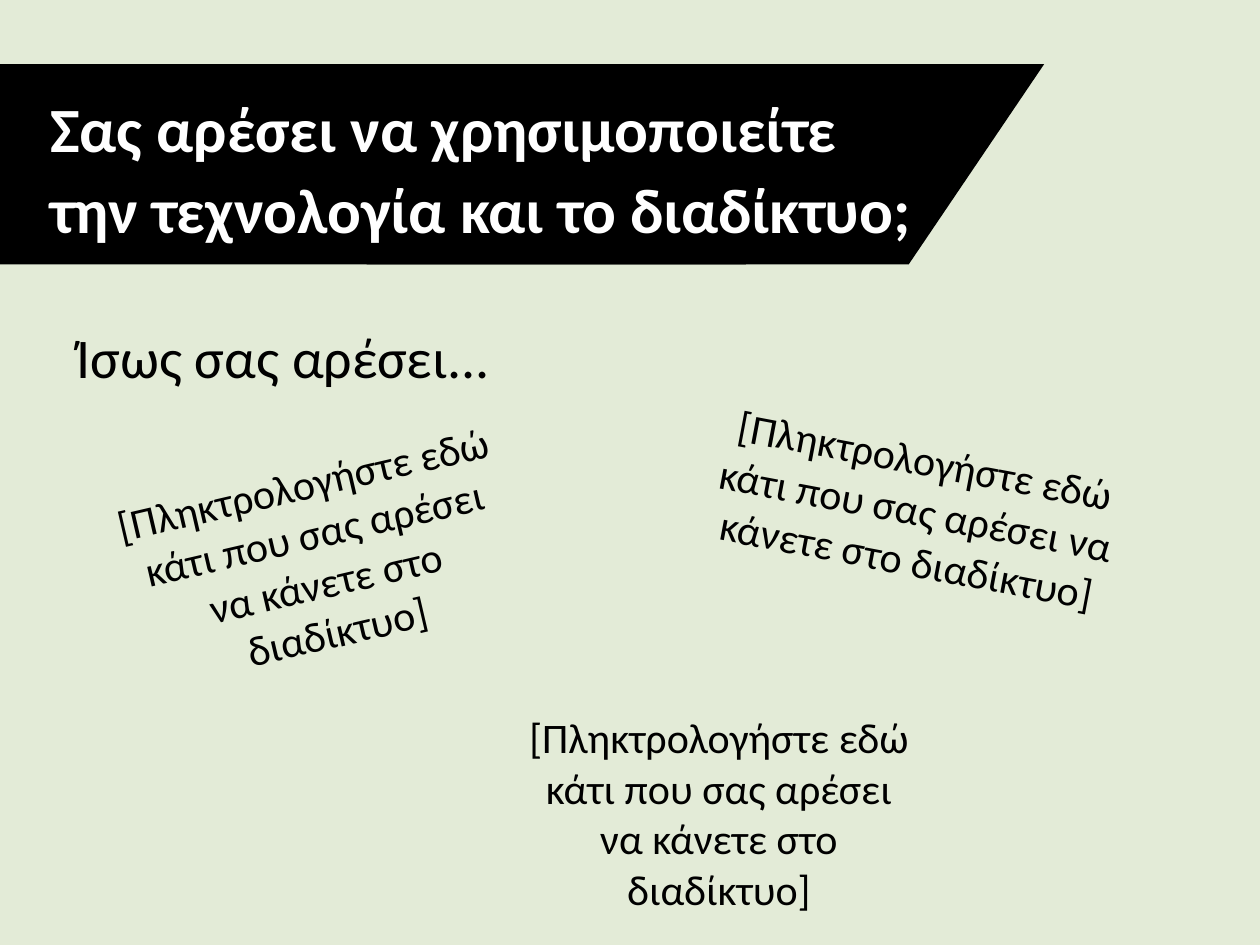
from dataclasses import dataclass

from pptx import Presentation
from pptx import util as u
from pptx.dml.color import RGBColor
from pptx.enum import shapes, text
from pptx.slide import Slide


@dataclass(frozen=True)
class Theme:
    font: str = "Calibri"
    background: RGBColor = RGBColor(0xE3, 0xEB, 0xD7)
    dark: RGBColor = RGBColor(0, 0, 0)
    light: RGBColor = RGBColor(0xFF, 0xFF, 0xFF)
    title_size: float = 36
    lead_size: float = 32
    prompt_size: float = 24


@dataclass(frozen=True)
class Box:
    left: float
    top: float
    width: float
    height: float
    rotation: float = 0

    def lengths(self) -> tuple[u.Length, ...]:
        return tuple(u.Pt(value) for value in (self.left, self.top, self.width, self.height))


@dataclass(frozen=True)
class Label:
    box: Box
    wording: str
    size: float
    color: RGBColor
    bold: bool = False
    alignment: text.PP_ALIGN = text.PP_ALIGN.LEFT
    line_spacing: float = 1.0


THEME = Theme()
BANNER_TOP, BANNER_HEIGHT = 36.6, 114.5
BANNER_PARTS = (
    (shapes.MSO_SHAPE.FLOWCHART_DATA, Box(209.5, BANNER_TOP, 387.2, BANNER_HEIGHT)),
    (shapes.MSO_SHAPE.RECTANGLE, Box(0, BANNER_TOP, 426.2, BANNER_HEIGHT)),
)
PROMPT = "[Πληκτρολογήστε εδώ κάτι που σας αρέσει να κάνετε στο διαδίκτυο]"
PROMPT_BOXES = (
    Box(63.4, 257, 239, 123.8, 346.9),
    Box(400.3, 244.1, 246.2, 94.3, 10.7),
    Box(290.2, 403.2, 241.2, 123.8),
)
TITLE = Label(
    Box(21.6, 44.6, 511.9, 98.6),
    "Σας αρέσει να χρησιμοποιείτε την τεχνολογία και το διαδίκτυο;",
    THEME.title_size,
    THEME.light,
    bold=True,
    line_spacing=1.07,
)
LEAD = Label(Box(36.7, 180.7, 360, 46.1), "Ίσως σας αρέσει...", THEME.lead_size, THEME.dark)


def draw_banner_part(slide: Slide, kind: shapes.MSO_SHAPE, box: Box) -> None:
    shape = slide.shapes.add_shape(kind, *box.lengths())
    shape.shadow.inherit = False
    shape.fill.solid()
    shape.fill.fore_color.rgb = THEME.dark
    shape.line.fill.background()


def draw_label(slide: Slide, label: Label) -> None:
    shape = slide.shapes.add_textbox(*label.box.lengths())
    shape.rotation = label.box.rotation
    frame = shape.text_frame
    frame.word_wrap = True
    frame.auto_size = text.MSO_AUTO_SIZE.SHAPE_TO_FIT_TEXT
    frame.text = label.wording
    paragraph = frame.paragraphs[0]
    paragraph.alignment = label.alignment
    paragraph.line_spacing = label.line_spacing
    font = paragraph.runs[0].font
    font.name = THEME.font
    font.size = u.Pt(label.size)
    font.bold = label.bold
    font.color.rgb = label.color


def main() -> None:
    presentation = Presentation()
    presentation.slide_width, presentation.slide_height = u.Pt(720), u.Pt(540)
    slide = presentation.slides.add_slide(presentation.slide_layouts[6])
    slide.background.fill.solid()
    slide.background.fill.fore_color.rgb = THEME.background

    for kind, box in BANNER_PARTS:
        draw_banner_part(slide, kind, box)
    draw_label(slide, TITLE)
    for box in PROMPT_BOXES:
        draw_label(
            slide,
            Label(box, PROMPT, THEME.prompt_size, THEME.dark, alignment=text.PP_ALIGN.CENTER),
        )
    draw_label(slide, LEAD)
    presentation.save("out.pptx")


if __name__ == "__main__":
    main()
